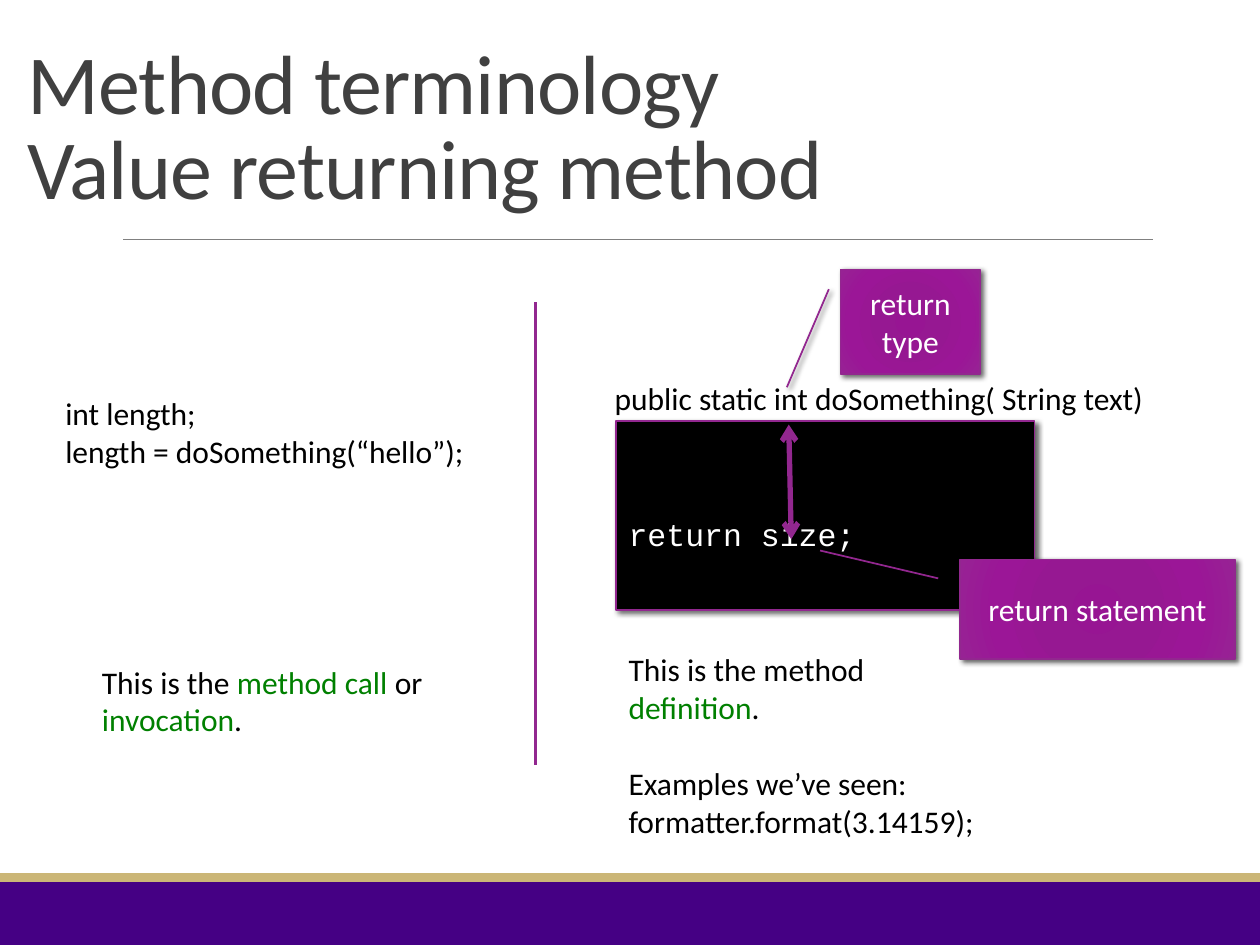
import pptx
import pptx.dml.color
import pptx.enum.shapes
import pptx.enum.text
import pptx.oxml
import pptx.oxml.ns
import pptx.util

Inches = pptx.util.Inches
Pt = pptx.util.Pt
RGBColor = pptx.dml.color.RGBColor
MSO_SHAPE = pptx.enum.shapes.MSO_SHAPE
MSO_ANCHOR = pptx.enum.text.MSO_ANCHOR
PP_ALIGN = pptx.enum.text.PP_ALIGN
MSO_AUTO_SIZE = pptx.enum.text.MSO_AUTO_SIZE

BLACK = RGBColor(0x00, 0x00, 0x00)
WHITE = RGBColor(0xFF, 0xFF, 0xFF)
TITLE_GRAY = RGBColor(0x40, 0x40, 0x40)
RULE_GRAY = RGBColor(0x80, 0x80, 0x80)
PURPLE = RGBColor(0x92, 0x27, 0x8F)
BAND_PURPLE = RGBColor(0x45, 0x00, 0x84)
BAND_GOLD = RGBColor(0xCB, 0xB6, 0x77)
TERM_GREEN = RGBColor(0x00, 0x80, 0x00)
CALLOUT_STOPS = (
    (0, RGBColor(0x97, 0x15, 0x93)),
    (34, RGBColor(0x96, 0x18, 0x92)),
    (70, RGBColor(0x9B, 0x16, 0x97)),
    (100, RGBColor(0x97, 0x22, 0x94)),
)
NS = pptx.oxml.ns.nsdecls("a")


def format_runs(paragraph, color, size=18, font="Calibri"):
    for run in paragraph.runs:
        run.font.size = Pt(size)
        run.font.name = font
        run.font.color.rgb = color


def add_box(slide, kind, at, fill, outline=None):
    box = slide.shapes.add_shape(kind, *map(Inches, at))
    box.shadow.inherit = False
    box.fill.solid()
    box.fill.fore_color.rgb = fill
    if outline is None:
        box.line.fill.background()
    else:
        box.line.color.rgb = outline
        box.line.width = Pt(1)
    return box


def add_drop_shadow(box):
    effects = box._element.spPr.find(pptx.oxml.ns.qn("a:effectLst"))
    effects.append(pptx.oxml.parse_xml(
        f'<a:outerShdw {NS} blurRad="{Pt(3)}" dist="{Pt(2)}" dir="2700000" rotWithShape="0">'
        '<a:srgbClr val="000000"><a:alpha val="60000"/></a:srgbClr></a:outerShdw>'))


def apply_callout_gradient(box):
    stops = "".join(
        f'<a:gs pos="{position * 1000}"><a:srgbClr val="{color}"/></a:gs>'
        for position, color in CALLOUT_STOPS)
    gradient = pptx.oxml.parse_xml(
        f'<a:gradFill {NS} rotWithShape="1"><a:gsLst>{stops}</a:gsLst><a:path path="circle">'
        '<a:fillToRect l="100000" t="100000" r="100000" b="100000"/></a:path></a:gradFill>')
    properties = box._element.spPr
    properties.replace(properties.find(pptx.oxml.ns.qn("a:solidFill")), gradient)


def add_callout(slide, label, at, pointer=()):
    """Add a callout; pointer holds the y, x pairs of its line as box fractions."""
    callout = add_box(slide, MSO_SHAPE.LINE_CALLOUT_1, at, PURPLE, PURPLE)
    for index, value in enumerate(pointer):
        callout.adjustments[index] = value
    apply_callout_gradient(callout)
    add_drop_shadow(callout)
    frame = callout.text_frame
    frame.word_wrap = True
    frame.vertical_anchor = MSO_ANCHOR.MIDDLE
    frame.text = label
    frame.paragraphs[0].alignment = PP_ALIGN.CENTER
    format_runs(frame.paragraphs[0], WHITE)


def add_text(slide, at, text, wrap=True):
    frame = slide.shapes.add_textbox(*map(Inches, at)).text_frame
    frame.word_wrap = wrap
    frame.auto_size = MSO_AUTO_SIZE.SHAPE_TO_FIT_TEXT
    frame.text = text
    for paragraph in frame.paragraphs:
        format_runs(paragraph, BLACK)
    return frame


def highlight_terms(paragraph, terms):
    """Split the paragraph into runs so that each term is green."""
    rest = paragraph.text
    pieces = []
    for term in terms:
        before, _, rest = rest.partition(term)
        pieces += [(before, BLACK), (term, TERM_GREEN)]
    pieces.append((rest, BLACK))
    paragraph.clear()
    for text, _ in pieces:
        paragraph.add_run().text = text
    format_runs(paragraph, BLACK)
    for run, (_, color) in zip(paragraph.runs, pieces):
        run.font.color.rgb = color


def add_line(slide, start, end, color, width, arrows=False):
    connector = slide.shapes.add_connector(
        pptx.enum.shapes.MSO_CONNECTOR.STRAIGHT, *map(Inches, start + end))
    connector.line.color.rgb = color
    connector.line.width = Pt(width)
    if arrows:
        outline = connector.line._get_or_add_ln()
        for side in ("headEnd", "tailEnd"):
            outline.append(pptx.oxml.parse_xml(f'<a:{side} {NS} type="arrow"/>'))
    connector._element.spPr.append(pptx.oxml.parse_xml(f"<a:effectLst {NS}/>"))


def add_title(slide):
    frame = slide.shapes.add_textbox(*map(Inches, (0.12, 0.18, 8.25, 1.59))).text_frame
    frame.word_wrap = True
    frame.vertical_anchor = MSO_ANCHOR.BOTTOM
    heading = frame.paragraphs[0]
    heading.text = "Method terminology\vValue returning method"
    heading.line_spacing = 0.85
    format_runs(heading, TITLE_GRAY, 48)
    for run in heading.runs:
        run.font._element.set("spc", "-50")


def add_method_body(slide):
    body = add_box(slide, MSO_SHAPE.RECTANGLE, (4.89, 3.34, 3.32, 1.5), BLACK, PURPLE)
    add_drop_shadow(body)
    frame = body.text_frame
    frame.vertical_anchor = MSO_ANCHOR.MIDDLE
    frame.margin_top = Inches(0.35)
    frame.text = "return size;"
    frame.paragraphs[0].alignment = PP_ALIGN.LEFT
    format_runs(frame.paragraphs[0], WHITE, font="Courier New")


def main():
    presentation = pptx.Presentation()
    presentation.slide_width = Inches(10)
    presentation.slide_height = Inches(7.5)
    slide = presentation.slides.add_slide(presentation.slide_layouts[6])

    add_box(slide, MSO_SHAPE.RECTANGLE, (0, 7, 10, 0.5), BAND_PURPLE)
    add_box(slide, MSO_SHAPE.RECTANGLE, (0, 6.93, 10, 0.07), BAND_GOLD)
    add_line(slide, (0.98, 1.9), (9.15, 1.9), RULE_GRAY, 0.5)
    add_title(slide)

    add_method_body(slide)
    add_text(slide, (4.78, 2.96, 4.46, 0.4),
             "public static int doSomething( String text)", wrap=False)
    add_line(slide, (4.25, 2.4), (4.25, 6.07), PURPLE, 1.25)
    add_text(slide, (0.42, 3.08, 3.4, 0.71),
             "int length;\nlength = doSomething(“hello”);", wrap=False)

    call_note = add_text(slide, (0.71, 5.21, 3.11, 0.71),
                         "This is the method call or invocation.")
    highlight_terms(call_note.paragraphs[0], ("method call ", "invocation"))

    definition_note = add_text(
        slide, (4.89, 5.11, 3.11, 1.62),
        "This is the method definition.\nExamples we’ve seen:\nformatter.format(3.14159);")
    highlight_terms(definition_note.paragraphs[0], ("definition",))
    definition_note.paragraphs[1].space_before = Pt(22)

    add_line(slide, (6.26, 3.37), (6.28, 4.28), PURPLE, 3, arrows=True)
    add_callout(slide, "return type", (6.67, 2.14, 1.11, 0.83))
    add_callout(slide, "return statement", (7.62, 4.44, 2.18, 0.79),
                (0.19, -0.08, -0.09, -0.51))

    presentation.save("out.pptx")


if __name__ == "__main__":
    main()
